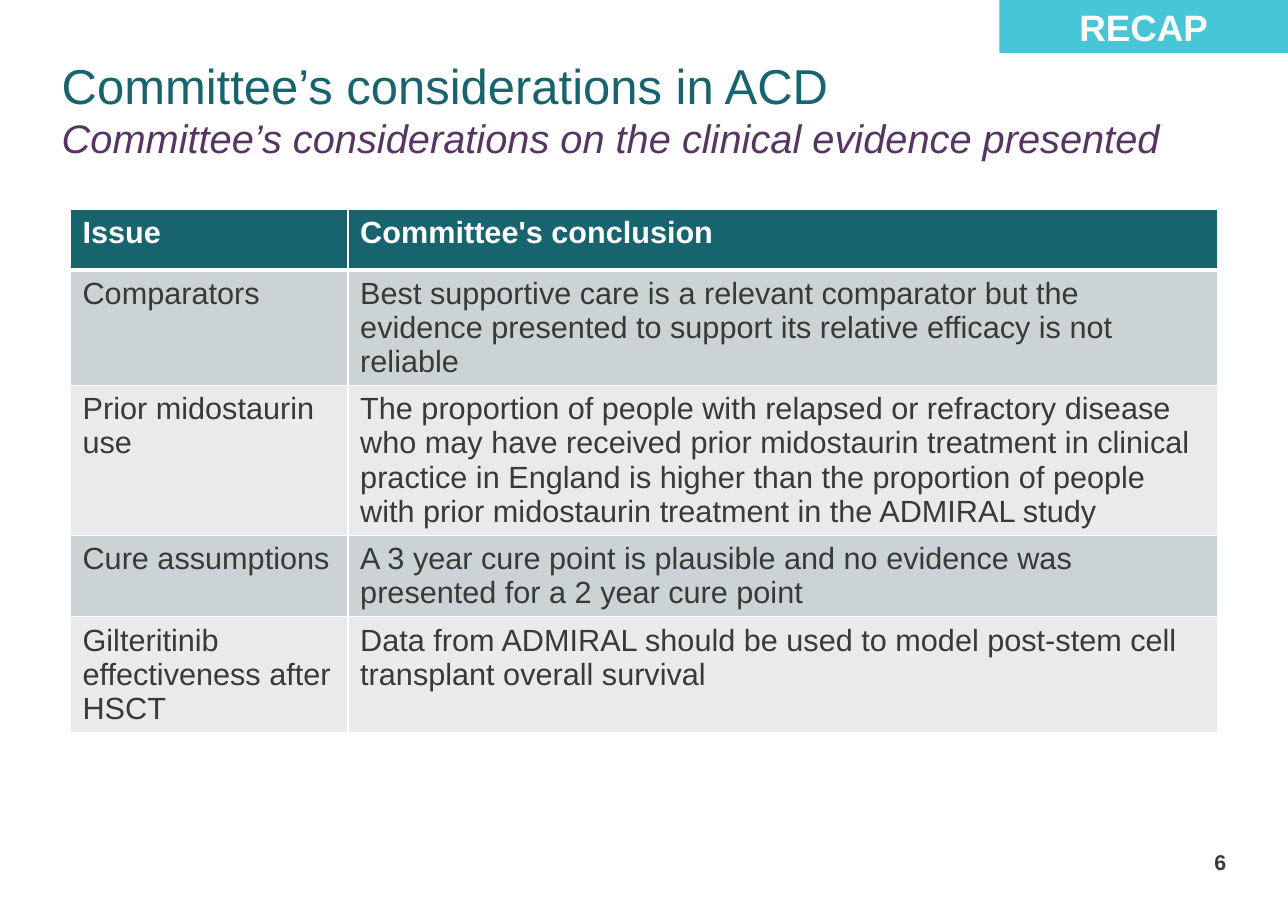
from lxml.etree import SubElement
from pptx import Presentation
from pptx.dml.color import RGBColor
from pptx.enum.shapes import MSO_SHAPE
from pptx.enum.text import MSO_ANCHOR, MSO_AUTO_SIZE, PP_ALIGN
from pptx.oxml.ns import qn
from pptx.util import Inches, Pt

TEAL = RGBColor(0x18, 0x64, 0x6E)
PURPLE = RGBColor(0x57, 0x35, 0x62)
CYAN = RGBColor(0x46, 0xC6, 0xD7)
CHARCOAL = RGBColor(0x39, 0x39, 0x38)
WHITE = RGBColor(0xFF, 0xFF, 0xFF)
BAND_DARK = RGBColor(0xCC, 0xD3, 0xD5)
BAND_LIGHT = RGBColor(0xE8, 0xEA, 0xEB)

ISSUES = [
    ("Issue", "Committee's conclusion"),
    ("Comparators",
     "Best supportive care is a relevant comparator but the evidence presented "
     "to support its relative efficacy is not reliable"),
    ("Prior midostaurin use",
     "The proportion of people with relapsed or refractory disease who may have "
     "received prior midostaurin treatment in clinical practice in England is "
     "higher than the proportion of people with prior midostaurin treatment in "
     "the ADMIRAL study"),
    ("Cure assumptions",
     "A 3 year cure point is plausible and no evidence was presented for a "
     "2 year cure point"),
    ("Gilteritinib effectiveness after HSCT",
     "Data from ADMIRAL should be used to model post-stem cell transplant "
     "overall survival"),
]


class SlideBuilder:
    """Holds the font and the current slide, and adds each kind of element."""

    def __init__(self, prs, font="Arial"):
        self.font = font
        self.s = prs.slides.add_slide(prs.slide_layouts[5])

    def run(self, p, text, size, color, bold=False, italic=False):
        r = p.add_run()
        r.text = text
        style = {"name": self.font, "size": Pt(size), "bold": bold, "italic": italic}
        for name, value in style.items():
            setattr(r.font, name, value)
        r.font.color.rgb = color

    def frame(self, tf, anchor, align, inset=0):
        style = {"word_wrap": True, "auto_size": MSO_AUTO_SIZE.NONE,
                 "vertical_anchor": anchor}
        for side in ("left", "top", "right", "bottom"):
            style[f"margin_{side}"] = Inches(inset)
        for name, value in style.items():
            setattr(tf, name, value)
        p = tf.paragraphs[0]
        p.alignment = align
        return p

    def title(self, box, heading, subheading):
        sp = self.s.shapes.title
        for name, value in zip(("left", "top", "width", "height"), box):
            setattr(sp, name, Inches(value))
        p = self.frame(sp.text_frame, MSO_ANCHOR.TOP, PP_ALIGN.LEFT)
        self.run(p, heading, 32, TEAL)
        p.add_line_break()
        self.run(p, subheading, 26, PURPLE, italic=True)

    def page_number(self, box, text):
        sp = self.s.shapes.add_textbox(*map(Inches, box))
        p = self.frame(sp.text_frame, MSO_ANCHOR.BOTTOM, PP_ALIGN.RIGHT)
        self.run(p, text, 14, CHARCOAL, bold=True)

    def tag(self, box, text):
        sp = self.s.shapes.add_shape(MSO_SHAPE.RECTANGLE, *map(Inches, box))
        sp.shadow.inherit = False
        sp.fill.solid()
        sp.fill.fore_color.rgb = CYAN
        sp.line.fill.background()
        p = self.frame(sp.text_frame, MSO_ANCHOR.MIDDLE, PP_ALIGN.CENTER, 0.05)
        self.run(p, text, 24, WHITE, bold=True)

    def borders(self, cell, top, bottom):
        tc_pr = cell._tc.get_or_add_tcPr()
        for side, width in {"L": 1, "R": 1, "T": top, "B": bottom}.items():
            ln = SubElement(tc_pr, qn(f"a:ln{side}"), w=str(Pt(width)))
            fill = SubElement(ln, qn("a:solidFill"))
            SubElement(fill, qn("a:srgbClr"), val=str(WHITE))

    def cell(self, cell, text, row):
        header = row == 0
        self.borders(cell, 3 if row == 1 else 1, 3 if header else 1)
        cell.fill.solid()
        cell.fill.fore_color.rgb = TEAL if header else (BAND_LIGHT, BAND_DARK)[row % 2]
        for side, inset in {"left": 0.11, "right": 0.11, "top": 0.06, "bottom": 0.06}.items():
            setattr(cell, f"margin_{side}", Inches(inset))
        p = cell.text_frame.paragraphs[0]
        self.run(p, text, 20, WHITE if header else CHARCOAL, bold=header)

    def table(self, left, top, widths, heights, rows):
        box = (left, top, sum(widths), sum(heights))
        table = self.s.shapes.add_table(len(rows), len(widths), *map(Inches, box)).table
        for column, width in zip(table.columns, widths):
            column.width = Inches(width)
        for i, (height, texts) in enumerate(zip(heights, rows)):
            table.rows[i].height = Inches(height)
            for j, text in enumerate(texts):
                self.cell(table.cell(i, j), text, i)


def main():
    prs = Presentation()
    prs.slide_width, prs.slide_height = Inches(11.69), Inches(8.27)
    slide = SlideBuilder(prs)
    slide.title((0.56, 0.5, 10.57, 0.84), "Committee’s considerations in ACD",
                "Committee’s considerations on the clinical evidence presented")
    slide.page_number((10.58, 7.58, 0.55, 0.36), "6")
    slide.table(0.64, 1.9, (2.52, 7.89), (0.55, 0.99, 0.55, 0.55, 0.99), ISSUES)
    slide.tag((9.07, 0, 2.62, 0.48), "RECAP")
    prs.save("out.pptx")


if __name__ == "__main__":
    main()
